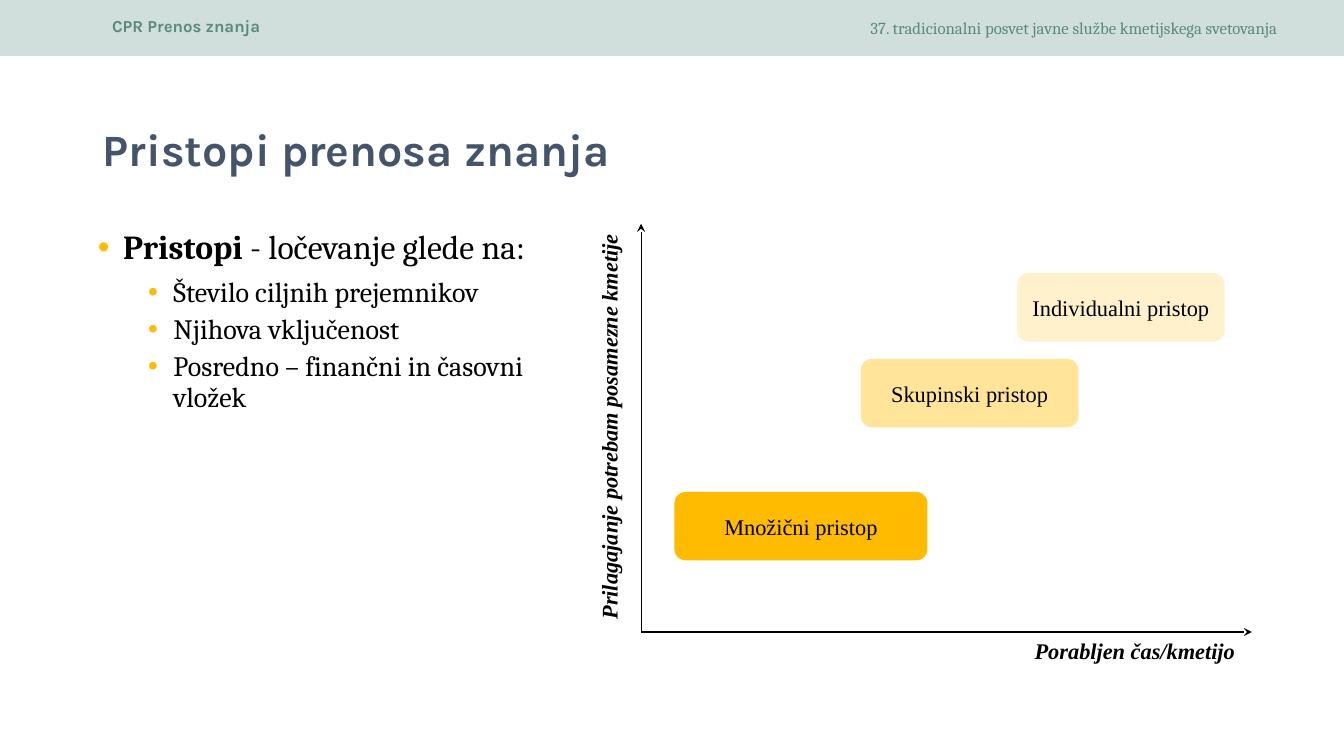
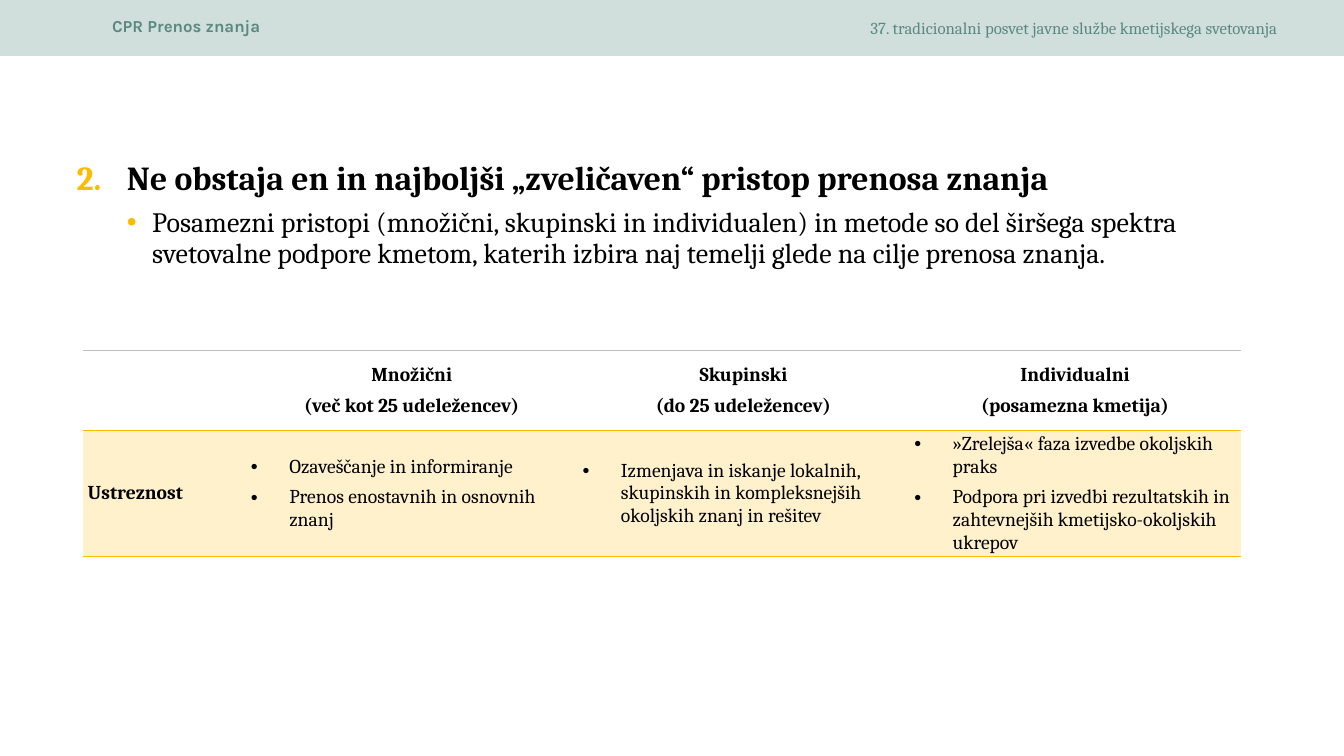
from lxml import etree
from pptx import Presentation
from pptx import util as u
from pptx.dml.color import RGBColor
from pptx.enum import shapes, text
from pptx.oxml import ns

BLACK = RGBColor(0x00, 0x00, 0x00)
SLATE = RGBColor(0x44, 0x54, 0x6A)
GREEN = RGBColor(0x5C, 0x89, 0x7E)
MINT = RGBColor(0xD0, 0xDF, 0xDC)
AMBER = RGBColor(0xFF, 0xBB, 0x00)
SAND = RGBColor(0xFF, 0xE4, 0x99)
CREAM = RGBColor(0xFF, 0xF1, 0xCC)
GREY = RGBColor(0xBF, 0xBF, 0xBF)

HEADING, BODY, DIAGRAM = "Karla", "Cambria", "Times New Roman"
WIDTH, HEIGHT = u.Inches(13.333), u.Inches(7.5)
LEFT, CENTER, RIGHT = text.PP_ALIGN.LEFT, text.PP_ALIGN.CENTER, text.PP_ALIGN.RIGHT
MIDDLE = text.MSO_ANCHOR.MIDDLE


def across(share):
    return round(WIDTH * share / 100)


def down(share):
    return round(HEIGHT * share / 100)


def area(left, top, width, height):
    return across(left), down(top), across(width), down(height)


def place(shape, *shares):
    shape.left, shape.top, shape.width, shape.height = area(*shares)


def add_xml(parent, tag, **attributes):
    return etree.SubElement(parent, ns.qn(tag), attributes)


def add_color(parent, color):
    add_xml(add_xml(parent, "a:solidFill"), "a:srgbClr", val=str(color))


def add_bullet(paragraph, margin, hanging, color, number=None):
    properties = paragraph._p.get_or_add_pPr()
    properties.set("marL", str(u.Inches(margin)))
    properties.set("indent", str(-u.Inches(hanging)))
    add_xml(add_xml(properties, "a:buClr"), "a:srgbClr", val=str(color))
    add_xml(properties, "a:buFont", typeface=BODY if number else "Arial")
    if number:
        add_xml(properties, "a:buAutoNum", type="arabicPeriod", startAt=str(number))
    else:
        add_xml(properties, "a:buChar", char="•")


def set_font(paragraph, name, size, color=BLACK, bold=False, italic=False):
    font = paragraph.font
    font.name, font.size = name, u.Pt(size)
    font.bold, font.italic = bold, italic
    font.color.rgb = color


def paragraphs(frame, lines):
    for index, line in enumerate(lines):
        paragraph = frame.add_paragraph() if index else frame.paragraphs[0]
        yield index, line, paragraph


def write_line(frame, words, align, *font, **emphasis):
    frame.word_wrap = True
    paragraph = frame.paragraphs[0]
    paragraph.text, paragraph.alignment = words, align
    set_font(paragraph, *font, **emphasis)


def add_label(slide, shares, words, align, *font, anchor=text.MSO_ANCHOR.TOP, **emphasis):
    label = slide.shapes.add_textbox(*area(*shares))
    label.text_frame.vertical_anchor = anchor
    write_line(label.text_frame, words, align, *font, **emphasis)
    return label


def add_block(slide, kind, shares, color):
    block = slide.shapes.add_shape(kind, *area(*shares))
    block.shadow.inherit = False
    block.fill.solid()
    block.fill.fore_color.rgb = color
    block.line.fill.background()
    return block


def add_arrow(slide, start, end, weight):
    arrow = slide.shapes.add_connector(
        shapes.MSO_CONNECTOR.STRAIGHT,
        across(start[0]), down(start[1]), across(end[0]), down(end[1]))
    arrow.line.color.rgb = BLACK
    arrow.line.width = u.Pt(weight)
    add_xml(arrow.get_or_add_ln(), "a:tailEnd", type="stealth")
    add_xml(arrow.element.spPr, "a:effectLst")


def add_approach(slide, left, top, width, color, words):
    block = add_block(slide, shapes.MSO_SHAPE.ROUNDED_RECTANGLE,
                      (left, top, width, 9.07), color)
    block.text_frame.vertical_anchor = MIDDLE
    write_line(block.text_frame, words, CENTER, DIAGRAM, 16)


def write_title(slide, words):
    title = slide.shapes.title
    place(title, 6.9, 10.4, 86.25, 19.33)
    title.text_frame.vertical_anchor = MIDDLE
    title.text_frame.auto_size = text.MSO_AUTO_SIZE.NONE
    write_line(title.text_frame, words, LEFT, HEADING, 32, SLATE, bold=True)
    title.text_frame.paragraphs[0].line_spacing = 0.9


def write_body(slide, shares, heading, points, number=None):
    body = slide.placeholders[1]
    place(body, *shares)
    frame = body.text_frame
    frame.auto_size = text.MSO_AUTO_SIZE.NONE
    for index, words, paragraph in paragraphs(frame, [heading, *points]):
        paragraph.line_spacing = 0.9
        paragraph.space_before = u.Pt(5 if index else 0)
        paragraph.space_after = u.Pt(0 if index else 3)
        if index:
            paragraph.text, paragraph.level = words, 1
            add_bullet(paragraph, 0.75, 0.25, AMBER)
            set_font(paragraph, BODY, 20)
        else:
            hanging = 0.5 if number else 0.25
            add_bullet(paragraph, hanging, hanging, AMBER, number)
            set_font(paragraph, BODY, 24)
            for part, bold in words:
                run = paragraph.add_run()
                run.text, run.font.bold = part, bold


def set_borders(cell, top, bottom):
    properties = cell._tc.get_or_add_tcPr()
    sides = {"a:lnL": None, "a:lnR": None, "a:lnT": top, "a:lnB": bottom}
    for index, (tag, color) in enumerate(sides.items()):
        line = etree.Element(ns.qn(tag), w=str(u.Pt(1)))
        if color is None:
            add_xml(line, "a:noFill")
        else:
            add_color(line, color)
        properties.insert(index, line)


def write_cell(cell, lines, align=LEFT, bold=False, bulleted=False):
    cell.vertical_anchor = MIDDLE
    cell.margin_left = cell.margin_right = u.Inches(0.05)
    cell.margin_top = cell.margin_bottom = 0
    for index, words, paragraph in paragraphs(cell.text_frame, lines):
        paragraph.text, paragraph.alignment = words, align
        paragraph.space_before = u.Pt(6 if index else 0)
        if bulleted:
            add_bullet(paragraph, 0.38, 0.38, BLACK)
        set_font(paragraph, BODY, 14, bold=bold)


def add_suitability(slide, headers, label, columns):
    widths = [12.15] + [24.68] * len(columns)
    heights = [10.53, 16.67]
    frame = slide.shapes.add_table(
        len(heights), len(widths), *area(6.15, 46.4, sum(widths), sum(heights)))
    table = frame.table
    table.first_row = table.horz_banding = False
    for column, width in zip(table.columns, widths):
        column.width = across(width)
    for row, height in zip(table.rows, heights):
        row.height = down(height)
    for column in range(len(widths)):
        header, detail = table.cell(0, column), table.cell(1, column)
        header.fill.background()
        detail.fill.solid()
        detail.fill.fore_color.rgb = CREAM
        set_borders(header, GREY, AMBER)
        set_borders(detail, AMBER, AMBER)
    write_cell(table.cell(1, 0), [label], bold=True)
    for column, (header, points) in enumerate(zip(headers, columns), 1):
        write_cell(table.cell(0, column), header, CENTER, bold=True)
        write_cell(table.cell(1, column), points, bulleted=True)


def add_master_band(presentation, slide):
    parts = [
        add_block(slide, shapes.MSO_SHAPE.RECTANGLE, (0, 0, 100, 7.4), MINT),
        add_label(slide, (7.6, 1.47, 50, 4), "CPR Prenos znanja",
                  LEFT, HEADING, 12, GREEN, bold=True),
        add_label(slide, (61.7, 1.07, 34.1, 5.33),
                  "37. tradicionalni posvet javne službe kmetijskega svetovanja",
                  RIGHT, BODY, 12, GREEN, anchor=MIDDLE),
    ]
    tree = presentation.slide_master.shapes.element
    for index, part in enumerate(parts):
        part.element.xpath(".//p:cNvPr")[0].set("id", str(101 + index))
        tree.insert(2 + index, part.element)


def build_approaches(slide):
    write_title(slide, "Pristopi prenosa znanja")
    write_body(slide, (6.53, 29.87, 34.58, 63.47),
               [("Pristopi", True), (" - ločevanje glede na:", False)],
               ["Število ciljnih prejemnikov", "Njihova vključenost",
                "Posredno – finančni in časovni vložek"])
    origin = (47.7, 83.6)
    add_arrow(slide, origin, (93.15, 83.6), 1)
    add_arrow(slide, origin, (47.7, 29.6), 0.5)
    add_label(slide, (52.35, 83.6, 40.28, 4.93), "Porabljen čas/kmetijo",
              RIGHT, DIAGRAM, 16, bold=True, italic=True)
    need = add_label(slide, (28.28, 57.47, 34.05, 4.93),
                     "Prilagajanje potrebam posamezne kmetije",
                     RIGHT, DIAGRAM, 16, bold=True, italic=True)
    need.rotation = 270
    add_approach(slide, 50.18, 65.07, 18.83, AMBER, "Množični pristop")
    add_approach(slide, 64.05, 47.47, 16.2, SAND, "Skupinski pristop")
    add_approach(slide, 75.68, 36.13, 15.45, CREAM, "Individualni pristop")


def build_choice(slide):
    title = slide.shapes.title.element
    title.getparent().remove(title)
    write_body(slide, (4.95, 20.67, 90.08, 24),
               [("Ne obstaja en in najboljši „zveličaven“ pristop prenosa znanja", True)],
               ["Posamezni pristopi (množični, skupinski in individualen) in metode so del "
                "širšega spektra svetovalne podpore kmetom, katerih izbira naj temelji "
                "glede na cilje prenosa znanja."], number=2)
    add_suitability(
        slide,
        [["Množični", "(več kot 25 udeležencev)"],
         ["Skupinski", "(do 25 udeležencev)"],
         ["Individualni", "(posamezna kmetija)"]],
        "Ustreznost",
        [["Ozaveščanje in informiranje", "Prenos enostavnih in osnovnih znanj"],
         ["Izmenjava in iskanje lokalnih, skupinskih in kompleksnejših okoljskih "
          "znanj in rešitev"],
         ["»Zrelejša« faza izvedbe okoljskih praks",
          "Podpora pri izvedbi rezultatskih in zahtevnejših kmetijsko-okoljskih ukrepov"]])


def main():
    presentation = Presentation()
    presentation.slide_width, presentation.slide_height = WIDTH, HEIGHT
    layout = presentation.slide_layouts[1]
    approaches, choice = (presentation.slides.add_slide(layout) for _ in range(2))
    add_master_band(presentation, approaches)
    build_approaches(approaches)
    build_choice(choice)
    presentation.save("out.pptx")


if __name__ == "__main__":
    main()
